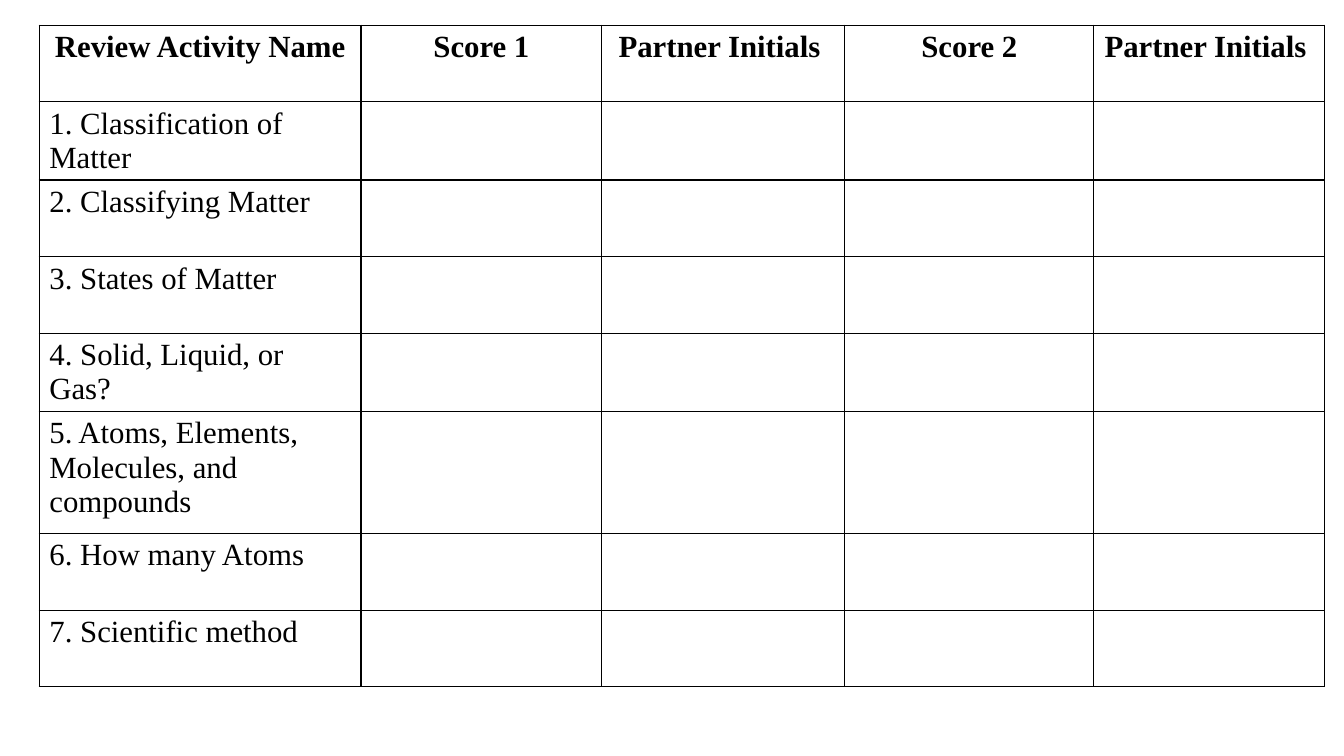
import pptx
import pptx.util
import pptx.dml.color
import pptx.enum.text
import pptx.oxml
import pptx.oxml.ns

HEADINGS = ["Review Activity Name", "Score 1", "Partner Initials ", "Score 2", "Partner Initials "]
ACTIVITIES = [
    "1. Classification of Matter",
    "2. Classifying Matter",
    "3. States of Matter",
    "4. Solid, Liquid, or Gas?",
    "5. Atoms, Elements, Molecules, and compounds",
    "6. How many Atoms",
    "7. Scientific method",
]
COLUMN_WIDTHS = [3.19, 2.39, 2.41, 2.47, 2.29]
ROW_HEIGHT = 0.76
TALL_ROW, TALL_HEIGHT = 5, 1.21
LEFT, TOP = 0.39, 0.25
FONT, FONT_SIZE = "Times New Roman", 22
INK, PAPER = "000000", "FFFFFF"
BORDER_WIDTH = pptx.util.Pt(1)


def color(value):
    return pptx.dml.color.RGBColor.from_string(value)


def add_borders(cell):
    properties = cell._tc.get_or_add_tcPr()
    for position, side in enumerate(("lnL", "lnR", "lnT", "lnB")):
        line = pptx.oxml.parse_xml(
            f'<a:{side} {pptx.oxml.ns.nsdecls("a")} w="{BORDER_WIDTH}">'
            f'<a:solidFill><a:srgbClr val="{INK}"/></a:solidFill></a:{side}>'
        )
        properties.insert(position, line)


def write(cell, words, heading):
    para = cell.text_frame.paragraphs[0]
    if heading:
        para.alignment = pptx.enum.text.PP_ALIGN.CENTER
    span = para.add_run()
    span.text = words
    span.font.name = FONT
    span.font.size = pptx.util.Pt(FONT_SIZE)
    span.font.bold = heading
    span.font.color.rgb = color(INK)


def main():
    deck = pptx.Presentation()
    deck.slide_width = pptx.util.Inches(13.33)
    deck.slide_height = pptx.util.Inches(7.5)
    page = deck.slides.add_slide(deck.slide_layouts[6])

    rows = [HEADINGS] + [[activity] for activity in ACTIVITIES]
    heights = [TALL_HEIGHT if index == TALL_ROW else ROW_HEIGHT for index in range(len(rows))]
    frame = [pptx.util.Inches(value) for value in (LEFT, TOP, sum(COLUMN_WIDTHS), sum(heights))]
    table = page.shapes.add_table(len(rows), len(HEADINGS), *frame).table
    table.horz_banding = False

    for column, width in zip(table.columns, COLUMN_WIDTHS):
        column.width = pptx.util.Inches(width)
    for row, height in zip(table.rows, heights):
        row.height = pptx.util.Inches(height)
    for cell in table.iter_cells():
        cell.fill.solid()
        cell.fill.fore_color.rgb = color(PAPER)
        add_borders(cell)
    for row_index, row in enumerate(rows):
        for column_index, words in enumerate(row):
            write(table.cell(row_index, column_index), words, row_index == 0)

    deck.save("out.pptx")


if __name__ == "__main__":
    main()
